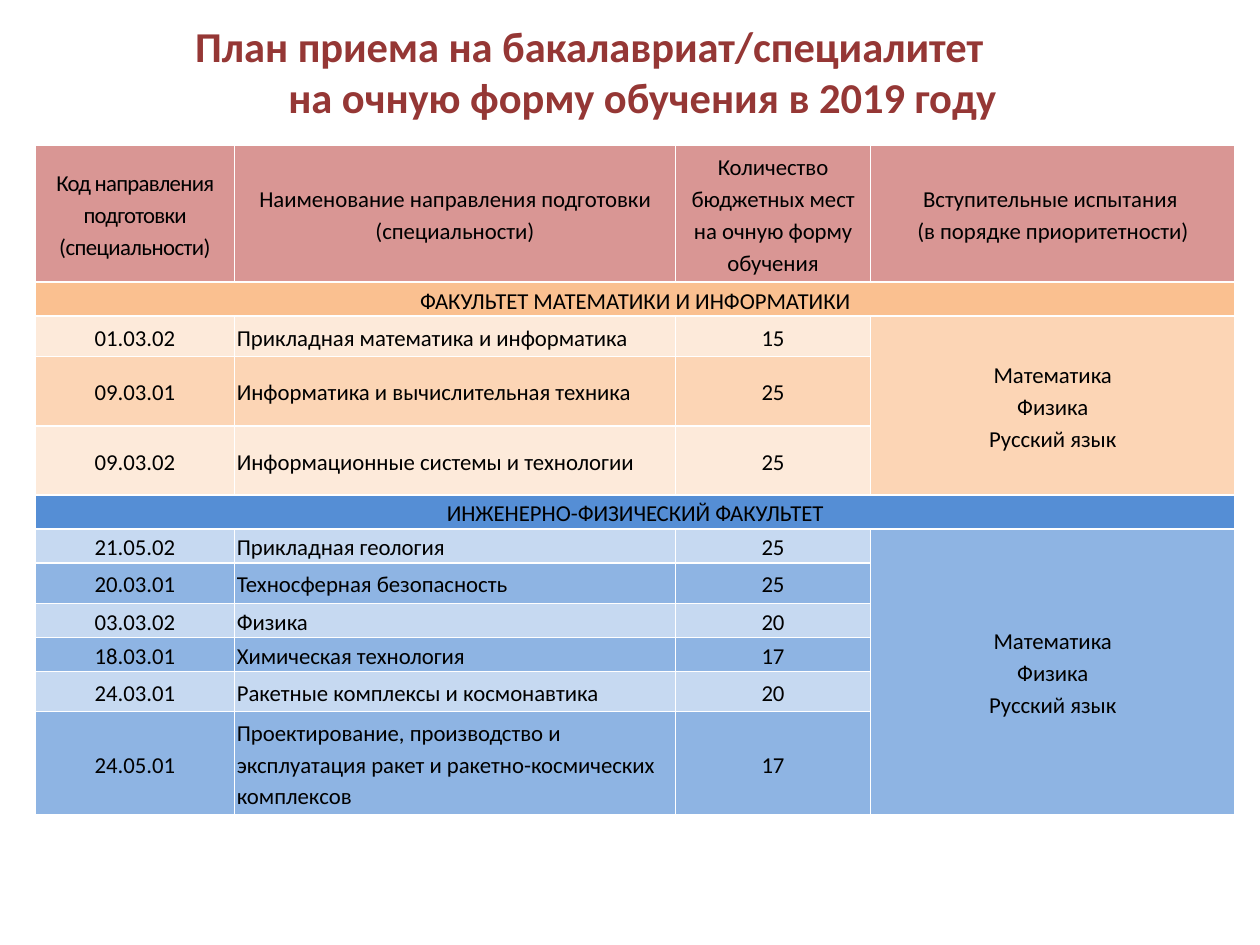
from pptx import Presentation
from pptx.dml.color import RGBColor
from pptx.enum.text import MSO_ANCHOR as Anchor, PP_ALIGN as Align
from pptx.oxml import parse_xml
from pptx.oxml.ns import nsdecls
from pptx.util import Inches, Pt

FONT = "Calibri"
BLACK = RGBColor(0x00, 0x00, 0x00)
MAROON = RGBColor(0x95, 0x37, 0x35)
ROSE = RGBColor(0xD9, 0x96, 0x94)
ORANGE = RGBColor(0xFA, 0xC0, 0x90)
PEACH = RGBColor(0xFC, 0xD5, 0xB5)
CREAM = RGBColor(0xFD, 0xEA, 0xDA)
BLUE = RGBColor(0x55, 0x8E, 0xD5)
SKY = RGBColor(0x8E, 0xB4, 0xE3)
PALE = RGBColor(0xC6, 0xD9, 0xF1)

# Title lines with their left indents
TITLE = [
    ("План приема на бакалавриат/специалитет", 1.33),
    ("на очную форму обучения в 2019 году", 2.07),
]
# Code heading: runs with their letter spacing in hundredths of a point
CODE_HEAD = [("Код направления подготовки ", -40), ("(специальности)", -30)]
HEADS = [
    ["Наименование направления подготовки (специальности)"],
    ["Количество бюджетных мест на очную форму обучения"],
    ["Вступительные испытания ", "(в порядке приоритетности)"],
]
EXAMS = ["Математика", "Физика", "Русский язык"]
# Faculty, band fill, light fill, dark fill, programmes (code, name, places, row height)
GROUPS = [
    ("ФАКУЛЬТЕТ МАТЕМАТИКИ И ИНФОРМАТИКИ", ORANGE, CREAM, PEACH, [
        ("01.03.02", "Прикладная математика и информатика", 15, 0.32),
        ("09.03.01", "Информатика и вычислительная техника", 25, 0.55),
        ("09.03.02", "Информационные системы и технологии", 25, 0.55),
    ]),
    ("ИНЖЕНЕРНО-ФИЗИЧЕСКИЙ ФАКУЛЬТЕТ", BLUE, PALE, SKY, [
        ("21.05.02", "Прикладная геология", 25, 0.27),
        ("20.03.01", "Техносферная безопасность", 25, 0.32),
        ("03.03.02", "Физика", 20, 0.27),
        ("18.03.01", "Химическая технология", 17, 0.27),
        ("24.03.01", "Ракетные комплексы и космонавтика", 20, 0.32),
        ("24.05.01", "Проектирование, производство и эксплуатация ракет "
                     "и ракетно-космических комплексов", 17, 0.82),
    ]),
]
COLS = [1.58, 3.5, 1.55, 2.89]
HEAD_H, BAND_H = 1.09, 0.27


def style(par, size, color, bold=False):
    font = par.font
    font.name, font.size, font.bold = FONT, Pt(size), bold
    font.color.rgb = color


def border(cell):
    props = cell._tc.get_or_add_tcPr()
    for n, side in enumerate(("lnL", "lnR", "lnT", "lnB")):
        props.insert(n, parse_xml(
            f'<a:{side} {nsdecls("a")} w="12700"><a:solidFill>'
            f'<a:srgbClr val="FFFFFF"/></a:solidFill></a:{side}>'))


def put(cell, lines, fill, align=Align.CENTER, pad=0):
    """Fill a cell with one paragraph per line; a line is text or a list of runs."""
    cell.fill.solid()
    cell.fill.fore_color.rgb = fill
    cell.vertical_anchor = Anchor.MIDDLE
    cell.margin_left = cell.margin_right = Inches(0.02)
    cell.margin_top = cell.margin_bottom = Inches(pad)
    frame = cell.text_frame
    for n, line in enumerate(lines):
        par = frame.add_paragraph() if n else frame.paragraphs[0]
        par.alignment, par.line_spacing = align, 1.15
        style(par, 13, BLACK)
        for text, gap in [(line, 0)] if isinstance(line, str) else line:
            run = par.add_run()
            run.text = text
            if gap:
                run.font._element.set("spc", str(gap))


deck = Presentation()
deck.slide_width, deck.slide_height = Inches(10), Inches(7.5)
slide = deck.slides.add_slide(deck.slide_layouts[6])

box = slide.shapes.add_textbox(Inches(0.12), Inches(0.13), Inches(9.88), Inches(0.87))
frame = box.text_frame
frame.word_wrap = True
frame.vertical_anchor = Anchor.MIDDLE
for n, (text, indent) in enumerate(TITLE):
    par = frame.add_paragraph() if n else frame.paragraphs[0]
    par.text = text
    par._p.get_or_add_pPr().set("marL", str(Inches(indent)))
    style(par, 24.3, MAROON, True)

heights = [HEAD_H]
for *_, rows in GROUPS:
    heights += [BAND_H] + [row[-1] for row in rows]
table = slide.shapes.add_table(
    len(heights), len(COLS), Inches(0.28), Inches(1.15),
    Inches(sum(COLS)), Inches(sum(heights))).table
table.first_row = table.horz_banding = False
for col, width in zip(table.columns, COLS):
    col.width = Inches(width)
for row, height in zip(table.rows, heights):
    row.height = Inches(height)

for c, lines in enumerate([[CODE_HEAD]] + HEADS):
    put(table.cell(0, c), lines, ROSE)

top = 1
for faculty, band, light, dark, rows in GROUPS:
    table.cell(top, 0).merge(table.cell(top, 3))
    put(table.cell(top, 0), [faculty], band)
    first, last = top + 1, top + len(rows)
    table.cell(first, 3).merge(table.cell(last, 3))
    put(table.cell(first, 3), EXAMS, dark, pad=0.04)
    for n, (code, name, places, _) in enumerate(rows):
        fill = dark if n % 2 else light
        put(table.cell(first + n, 0), [code], fill)
        put(table.cell(first + n, 1), [name], fill, Align.LEFT)
        put(table.cell(first + n, 2), [str(places)], fill)
    top = last + 1

for cell in table.iter_cells():
    border(cell)

deck.save("out.pptx")
